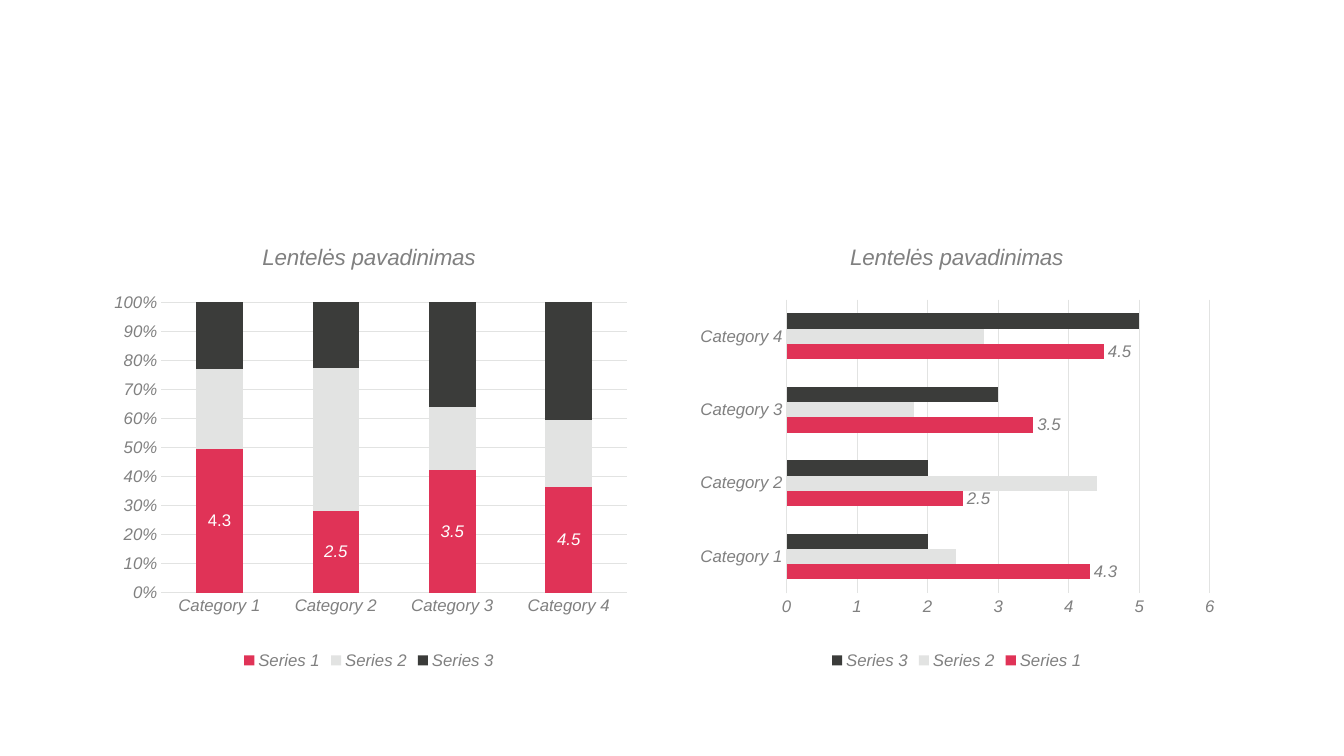
from lxml import etree
from pptx import Presentation
from pptx.chart.data import CategoryChartData
from pptx.dml.color import RGBColor
from pptx.enum.chart import (XL_CHART_TYPE, XL_LABEL_POSITION,
                             XL_LEGEND_POSITION, XL_TICK_MARK)
from pptx.oxml.ns import qn
from pptx.util import Inches, Pt

RED = RGBColor(0xE0, 0x33, 0x57)
LIGHT = RGBColor(0xE2, 0xE3, 0xE2)
DARK = RGBColor(0x3B, 0x3C, 0x3A)
GRAY = RGBColor(0x80, 0x80, 0x80)
WHITE = RGBColor(0xFF, 0xFF, 0xFF)

TITLE = "Lentelės pavadinimas"
CATEGORIES = [f"Category {n}" for n in range(1, 5)]
SERIES = [
    ("Series 1", (4.3, 2.5, 3.5, 4.5), RED),
    ("Series 2", (2.4, 4.4, 1.8, 2.8), LIGHT),
    ("Series 3", (2, 2, 3, 5), DARK),
]


def style_font(font, color=GRAY, size=12, italic=True):
    font.name = "Arial"
    font.size = Pt(size)
    font.bold = False
    font.italic = italic
    font.color.rgb = color


def style_line(line):
    line.color.rgb = LIGHT
    line.width = Pt(0.75)


def set_plot_layout(chart, x, y, w, h):
    """Fix the inner plot area, in fractions of the chart's size."""
    area = chart._chartSpace.chart.plotArea
    for old in area.findall(qn("c:layout")):
        area.remove(old)
    layout = etree.Element(qn("c:layout"))
    manual = etree.SubElement(layout, qn("c:manualLayout"))
    settings = [("layoutTarget", "inner"), ("xMode", "edge"), ("yMode", "edge"),
                ("x", x), ("y", y), ("w", w), ("h", h)]
    for tag, value in settings:
        etree.SubElement(manual, qn(f"c:{tag}")).set("val", str(value))
    area.insert(0, layout)


def style_axes(chart):
    for axis in (chart.category_axis, chart.value_axis):
        axis.major_tick_mark = axis.minor_tick_mark = XL_TICK_MARK.NONE
        style_font(axis.tick_labels.font)
    chart.category_axis.has_major_gridlines = False
    style_line(chart.category_axis.format.line)
    chart.value_axis.format.line.fill.background()
    style_line(chart.value_axis.major_gridlines.format.line)


def add_bar_chart(slide, left, kind, gap, layout, label_color, label_position):
    data = CategoryChartData()
    data.categories = CATEGORIES
    for name, values, _ in SERIES:
        data.add_series(name, values)
    chart = slide.shapes.add_chart(kind, Inches(left), Inches(2.23),
                                   Inches(5.48), Inches(4.45), data).chart
    style_font(chart.font)
    chart.has_title = True
    chart.chart_title.text_frame.text = TITLE
    style_font(chart.chart_title.text_frame.paragraphs[0].runs[0].font, size=16)
    chart.has_legend = True
    chart.legend.position = XL_LEGEND_POSITION.BOTTOM
    chart.legend.include_in_layout = False
    style_font(chart.legend.font)
    style_axes(chart)
    set_plot_layout(chart, *layout)

    plot = chart.plots[0]
    plot.gap_width = gap
    plot.vary_by_categories = False
    for series, (_, _, color) in zip(plot.series, SERIES):
        series.format.fill.solid()
        series.format.fill.fore_color.rgb = color
        series.invert_if_negative = False
    labels = plot.series[0].data_labels
    labels.show_value = True
    labels.position = label_position
    style_font(labels.font, label_color)
    return chart


def main():
    prs = Presentation()
    prs.slide_width, prs.slide_height = Inches(13.33), Inches(7.5)
    slide = prs.slides.add_slide(prs.slide_layouts[6])

    stacked = add_bar_chart(slide, 0.92, XL_CHART_TYPE.COLUMN_STACKED_100, 150,
                            (0.124, 0.173, 0.843, 0.648),
                            WHITE, XL_LABEL_POSITION.CENTER)
    stacked.value_axis.tick_labels.number_format = "0%"
    stacked.value_axis.tick_labels.number_format_is_linked = False
    first_label = stacked.plots[0].series[0].points[0].data_label
    style_font(first_label.font, WHITE, italic=False)
    first_label.position = XL_LABEL_POSITION.CENTER

    add_bar_chart(slide, 6.75, XL_CHART_TYPE.BAR_CLUSTERED, 182,
                  (0.192, 0.167, 0.766, 0.655),
                  GRAY, XL_LABEL_POSITION.OUTSIDE_END)
    prs.save("out.pptx")


if __name__ == "__main__":
    main()
